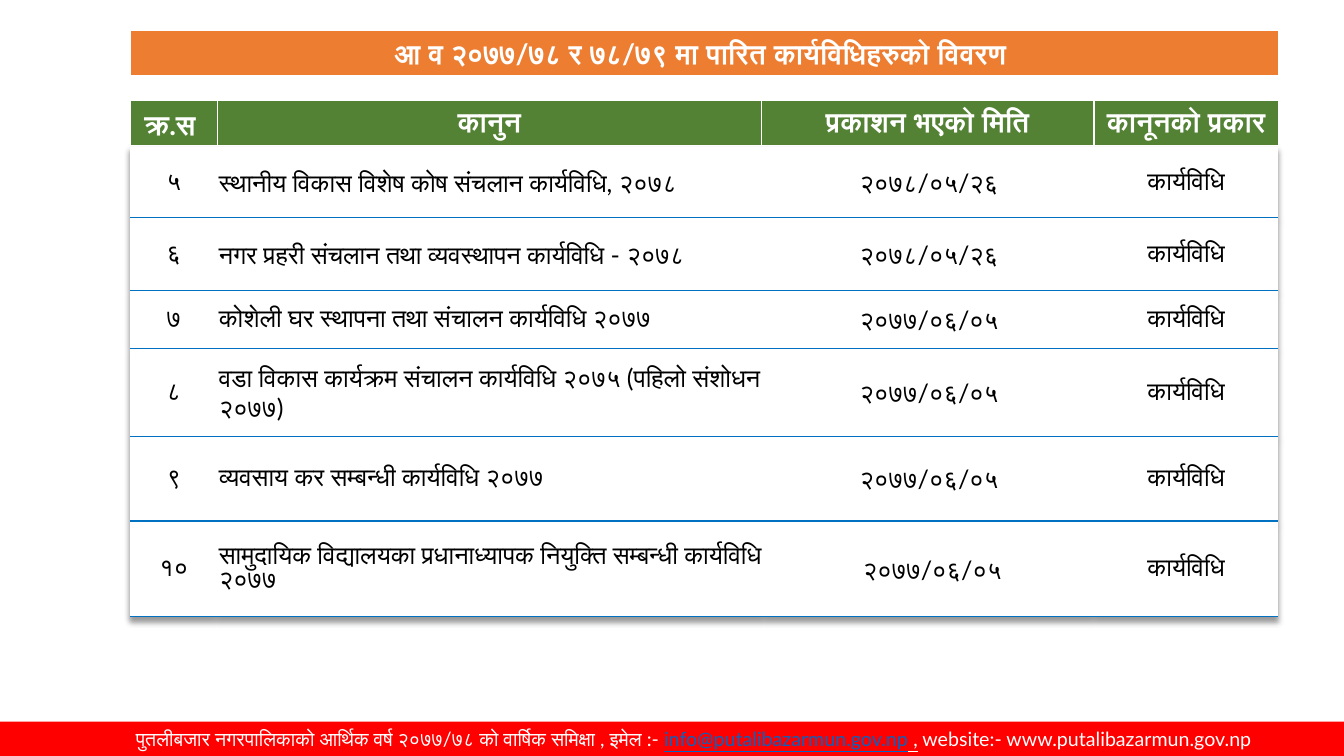
from lxml.etree import SubElement
from pptx import Presentation
from pptx.dml.color import RGBColor
from pptx.enum.shapes import MSO_SHAPE
from pptx.enum.text import MSO_ANCHOR, PP_ALIGN
from pptx.oxml import parse_xml
from pptx.oxml.ns import qn
from pptx.util import Inches, Pt

WHITE = RGBColor(0xFF, 0xFF, 0xFF)
BLACK = RGBColor(0, 0, 0)
ORANGE = RGBColor(0xED, 0x7D, 0x31)
GREEN = RGBColor(0x54, 0x82, 0x35)
BLUE = RGBColor(0x00, 0x70, 0xC0)
LINK_BLUE = RGBColor(0x05, 0x63, 0xC1)
RED = RGBColor(0xFF, 0, 0)

FONT = "Lato"
PLAIN_STYLE = "{2D5ABB26-0587-4C30-8999-92F81FD0307C}"
WHITE_BORDERS = {"L": 1, "R": 1, "T": 1, "B": 3}
SHADOW = (
    '<a:effectLst xmlns:a="http://schemas.openxmlformats.org/drawingml/2006/main">'
    '<a:outerShdw blurRad="50800" dist="38100" dir="5400000" algn="t" rotWithShape="0">'
    '<a:srgbClr val="000000"><a:alpha val="40000"/></a:srgbClr>'
    "</a:outerShdw></a:effectLst>"
)

LEFT, WIDTH = 1.29, 11.39
TITLE = "आ व २०७७/७८ र ७८/७९ मा पारित कार्यविधिहरुको विवरण "
HEADINGS = ["क्र.स ", "कानुन", "प्रकाशन भएको मिति", "कानूनको प्रकार"]
PROCEDURES = [
    ("५", "स्थानीय विकास विशेष कोष संचलान कार्यविधि, २०७८", "२०७८/०५/२६"),
    ("६", "नगर प्रहरी संचलान तथा व्यवस्थापन कार्यविधि - २०७८", "२०७८/०५/२६"),
    ("७", "कोशेली घर स्थापना तथा संचालन कार्यविधि २०७७", "२०७७/०६/०५"),
    ("८", "वडा विकास कार्यक्रम संचालन कार्यविधि २०७५ (पहिलो संशोधन २०७७)", "२०७७/०६/०५"),
    ("९", "व्यवसाय कर सम्बन्धी कार्यविधि २०७७", "२०७७/०६/०५"),
    ("१०", "सामुदायिक विद्यालयका प्रधानाध्यापक नियुक्ति सम्बन्धी कार्यविधि २०७७", " २०७७/०६/०५"),
]
KIND = "कार्यविधि"
FOOTER = [
    ("पुतलीबजार नगरपालिकाको आर्थिक वर्ष २०७७/७८ को वार्षिक समिक्षा , इमेल :- ", WHITE, False),
    ("info@putalibazarmun.gov.np", LINK_BLUE, True),
    (" ,", WHITE, True),
    (" website:- www.putalibazarmun.gov.np", WHITE, False),
]


def format_para(para, size, color, bold=False, align=PP_ALIGN.CENTER):
    para.alignment = align
    para.font.name = FONT
    para.font.size = Pt(size)
    para.font.bold = bold
    para.font.color.rgb = color


def draw_borders(cell, borders, color):
    properties = cell._tc.get_or_add_tcPr()
    for side, points in borders.items():
        line = SubElement(properties, qn(f"a:ln{side}"), w=str(Pt(points)))
        fill = SubElement(line, qn("a:solidFill"))
        SubElement(fill, qn("a:srgbClr"), val=str(color))


def add_grid(page, left, top, columns, heights, rows, style):
    size, color, bold, fill, borders, border_color, law_align = style
    table = page.shapes.add_table(
        len(rows), len(columns), Inches(left), Inches(top),
        Inches(sum(columns)), Inches(sum(heights)),
    ).table
    table.first_row = table.horz_banding = False
    table._tbl.tblPr.find(qn("a:tableStyleId")).text = PLAIN_STYLE
    for column, width in zip(table.columns, columns):
        column.width = Inches(width)
    for row, height, texts in zip(table.rows, heights, rows):
        row.height = Inches(height)
        for index, (cell, text) in enumerate(zip(row.cells, texts)):
            cell.text = text
            cell.vertical_anchor = MSO_ANCHOR.MIDDLE
            cell.margin_left = cell.margin_right = cell.margin_top = Inches(0.01)
            cell.margin_bottom = 0
            draw_borders(cell, borders, border_color)
            cell.fill.solid()
            cell.fill.fore_color.rgb = fill
            align = law_align if index == 1 else PP_ALIGN.CENTER
            format_para(cell.text_frame.paragraphs[0], size, color, bold, align)
    return table


def add_title(page, left, top, width):
    style = (20, WHITE, True, ORANGE, WHITE_BORDERS, WHITE, PP_ALIGN.CENTER)
    table = add_grid(page, left, top, [width], [0.46], [[TITLE]], style)
    cell = table.cell(0, 0)
    cell.margin_left = cell.margin_right = Inches(0.1)
    cell.margin_top = cell.margin_bottom = Inches(0.05)


def add_heading_row(page, left, top):
    style = (20, WHITE, True, GREEN, WHITE_BORDERS, WHITE, PP_ALIGN.CENTER)
    add_grid(page, left, top, [0.87, 5.39, 3.3, 1.83], [0.46], [HEADINGS], style)


def add_procedures(page, left, top):
    style = (18, BLACK, False, WHITE, {"B": 1}, BLUE, PP_ALIGN.LEFT)
    rows = [(*procedure, KIND) for procedure in PROCEDURES]
    heights = [0.7, 0.72, 0.58, 0.87, 0.84, 0.95]
    table = add_grid(page, left, top, [0.87, 5.42, 3.27, 1.83], heights, rows, style)
    table.cell(len(rows) - 1, 1).text_frame.paragraphs[0].line_spacing = 0.95
    table._tbl.tblPr.insert(0, parse_xml(SHADOW))


def add_footer(page, left, top, width, height):
    band = page.shapes.add_shape(
        MSO_SHAPE.RECTANGLE, Inches(left), Inches(top), Inches(width), Inches(height)
    )
    band.shadow.inherit = False
    band.fill.solid()
    band.fill.fore_color.rgb = RED
    band.line.fill.background()
    frame = band.text_frame
    frame.word_wrap = True
    frame.vertical_anchor = MSO_ANCHOR.MIDDLE
    frame.margin_left = Inches(0.53)
    para = frame.paragraphs[0]
    format_para(para, 14, WHITE)
    for text, color, underline in FOOTER:
        span = para.add_run()
        span.text = text
        span.font.color.rgb = color
        span.font.underline = underline


def main():
    deck = Presentation()
    deck.slide_width, deck.slide_height = Inches(13.33), Inches(7.5)
    page = deck.slides.add_slide(deck.slide_layouts[6])
    add_footer(page, 0, 7.16, 13.33, 0.34)
    add_title(page, LEFT, 0.3, WIDTH)
    add_heading_row(page, LEFT, 1)
    add_procedures(page, LEFT, 1.46)
    deck.save("out.pptx")


if __name__ == "__main__":
    main()
